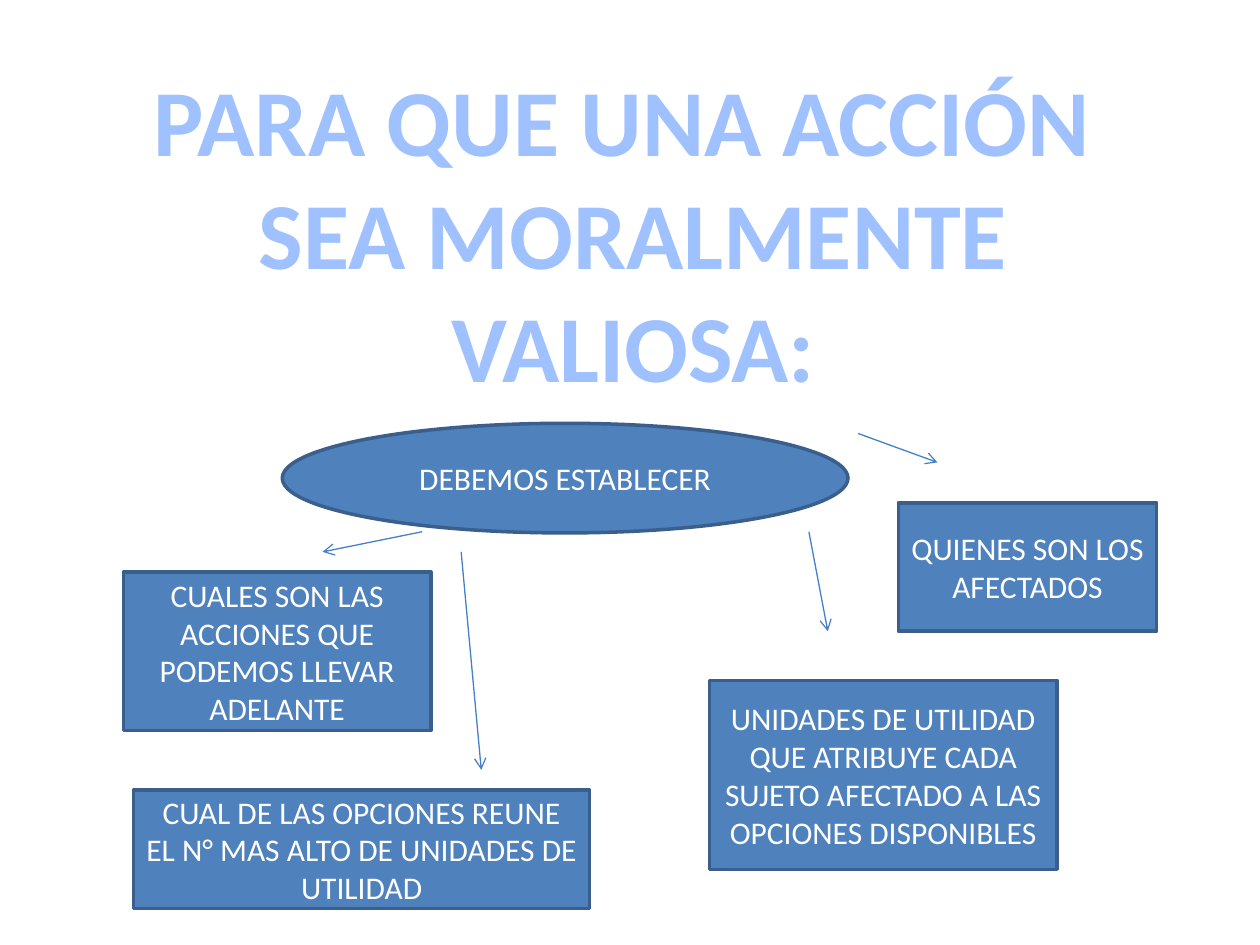
from lxml import etree
from pptx import Presentation, util as u
from pptx.dml.color import RGBColor
from pptx.enum import shapes, text
from pptx.oxml.ns import qn

W, H = 10, 7.5
TITLE = ["PARA QUE UNA ACCIÓN ", "SEA MORALMENTE", "VALIOSA:"]
TITLE_BOX = (10.8, 5.87, 78.9, 37.73)
OVAL, RECT = shapes.MSO_SHAPE.OVAL, shapes.MSO_SHAPE.RECTANGLE
# Percent of slide width and height
NODES = [
    (OVAL, (22.4, 44.8, 44.9, 11.6), "DEBEMOS ESTABLECER"),
    (RECT, (9.8, 60.53, 24.4, 16.8),
     "CUALES SON LAS ACCIONES QUE PODEMOS LLEVAR ADELANTE"),
    (RECT, (71.3, 53.2, 20.5, 13.6), "QUIENES SON LOS AFECTADOS"),
    (RECT, (56.3, 72, 27.6, 20),
     "UNIDADES DE UTILIDAD QUE ATRIBUYE CADA SUJETO AFECTADO A LAS OPCIONES DISPONIBLES"),
    (RECT, (10.6, 83.6, 36.2, 12.53),
     "CUAL DE LAS OPCIONES REUNE EL N° MAS ALTO DE UNIDADES DE UTILIDAD"),
]
ARROWS = [
    (33.5, 56.27, 25.6, 58.4),
    (36.6, 58.4, 38.2, 81.47),
    (64.2, 56.27, 65.7, 66.8),
    (68.1, 45.87, 74.4, 48.93),
]
TITLE_FONT = {"name": "Calibri", "size": u.Pt(54), "bold": True}
NODE_FONT = {"name": "Calibri", "size": u.Pt(18)}


def rgb(value):
    return RGBColor.from_string(value)


def place(shares):
    return [u.Inches(v / 100 * (H if i % 2 else W)) for i, v in enumerate(shares)]


def write(tf, lines, font, color):
    for i, line in enumerate(lines):
        p = tf.add_paragraph() if i else tf.paragraphs[0]
        p.alignment = text.PP_ALIGN.CENTER
        r = p.add_run()
        r.text = line
        for key, value in font.items():
            setattr(r.font, key, value)
        r.font.color.rgb = rgb(color)


def stroke(line, color, width):
    line.color.rgb = rgb(color)
    line.width = u.Pt(width)


def add_node(s, kind, shares, label):
    sp = s.shapes.add_shape(kind, *place(shares))
    sp.shadow.inherit = False
    sp.fill.solid()
    sp.fill.fore_color.rgb = rgb("4F81BD")
    stroke(sp.line, "3A5F8C", 2)
    sp.text_frame.word_wrap = True
    sp.text_frame.vertical_anchor = text.MSO_ANCHOR.MIDDLE
    write(sp.text_frame, [label], NODE_FONT, "FFFFFF")


def add_arrow(s, shares):
    c = s.shapes.add_connector(shapes.MSO_CONNECTOR.STRAIGHT, *place(shares))
    stroke(c.line, "4480C8", 0.75)
    etree.SubElement(c.line._get_or_add_ln(), qn("a:tailEnd"), type="arrow")
    etree.SubElement(c._element.spPr, qn("a:effectLst"))


def main():
    prs = Presentation()
    prs.slide_width, prs.slide_height = u.Inches(W), u.Inches(H)
    s = prs.slides.add_slide(prs.slide_layouts[6])
    tf = s.shapes.add_textbox(*place(TITLE_BOX)).text_frame
    tf.word_wrap = False
    tf.auto_size = text.MSO_AUTO_SIZE.SHAPE_TO_FIT_TEXT
    write(tf, TITLE, TITLE_FONT, "A0C1FF")
    for node in NODES:
        add_node(s, *node)
    for arrow in ARROWS:
        add_arrow(s, arrow)
    prs.save("out.pptx")


if __name__ == "__main__":
    main()
